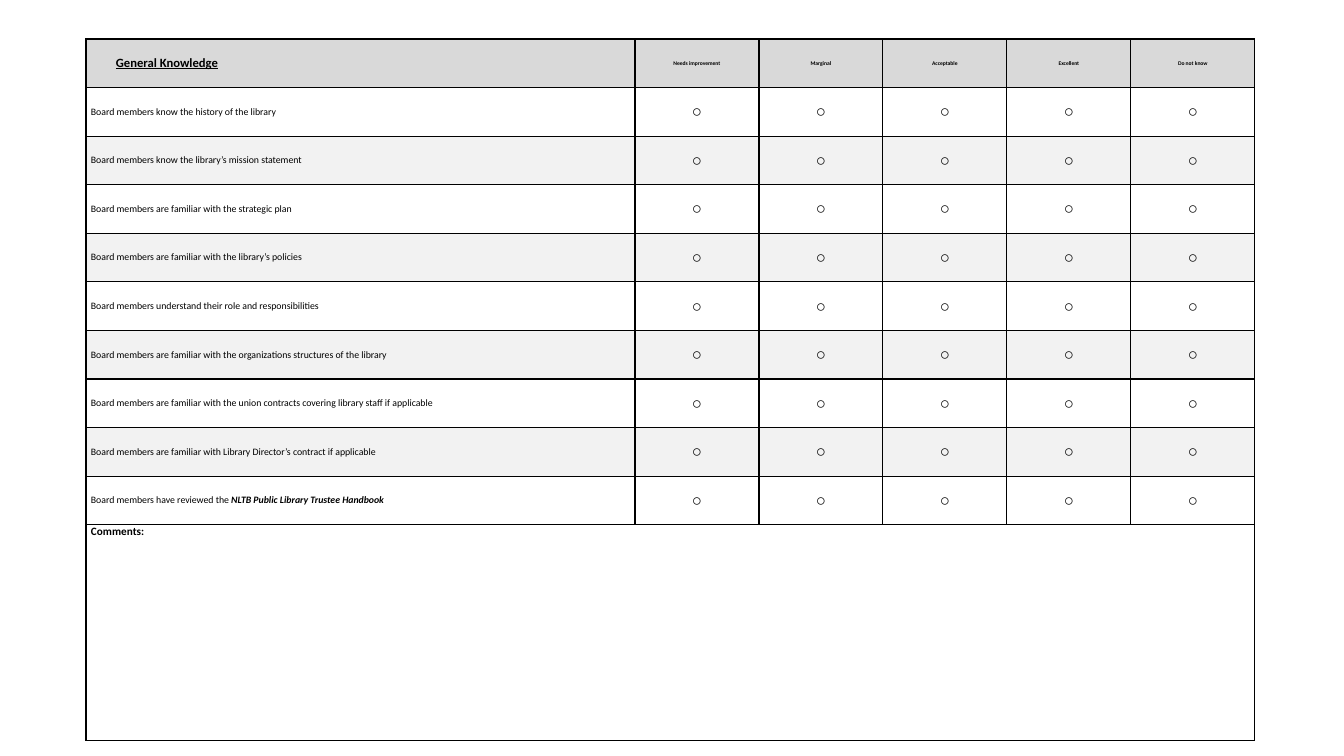
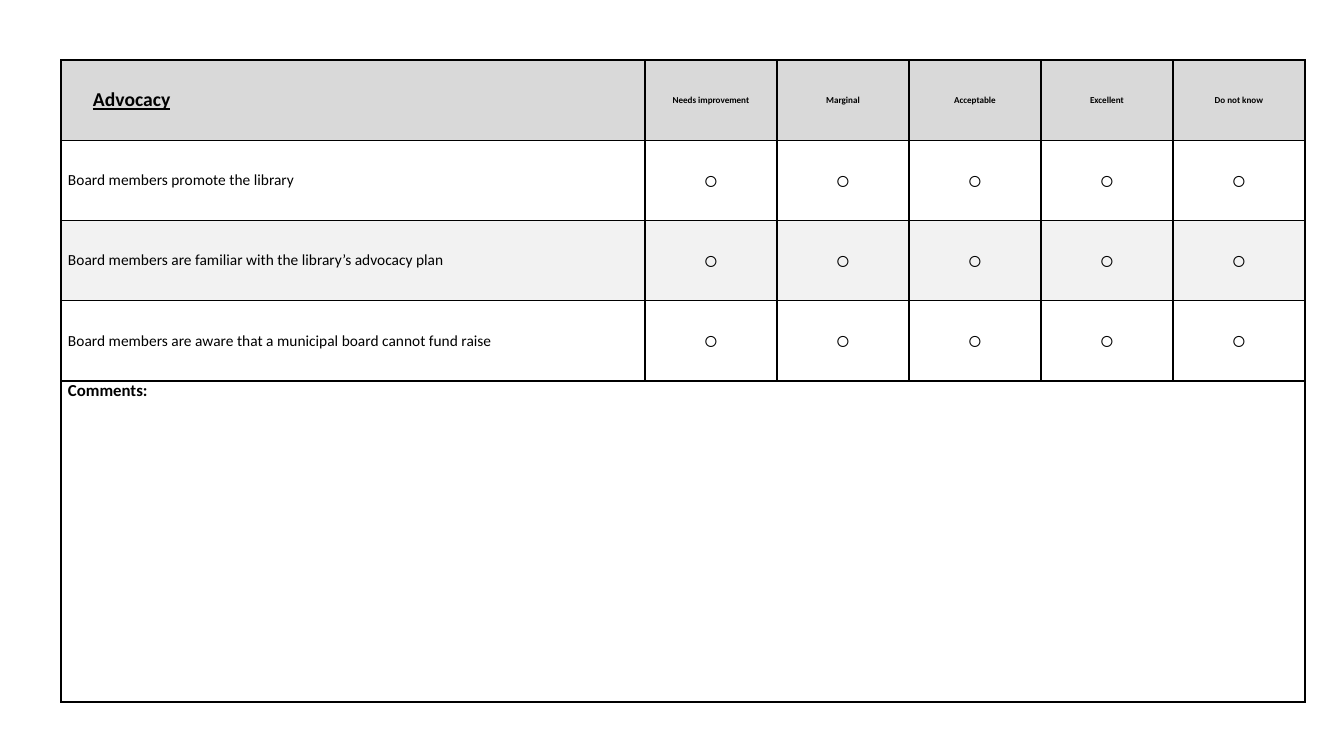
"""Build two board self-evaluation slides, each one a rating table."""
from pptx import Presentation
from pptx.dml.color import RGBColor
from pptx.enum.text import MSO_ANCHOR, PP_ALIGN
from pptx.oxml import parse_xml
from pptx.oxml.ns import nsdecls
from pptx.util import Pt

SCALE = 914400 / 100.8
LEFT, CENTER = PP_ALIGN.LEFT, PP_ALIGN.CENTER
TOP, MIDDLE = MSO_ANCHOR.TOP, MSO_ANCHOR.MIDDLE
BLACK, WHITE, HEADER, BAND = "000000", "FFFFFF", "D9D9D9", "F2F2F2"
RATINGS = ["Needs improvement", "Marginal", "Acceptable", "Excellent", "Do not know"]
INDENT = 25

SECTIONS = [
    {
        "title": "General Knowledge",
        "left": 86, "top": 39, "question_w": 549, "rating_w": 124,
        "grid_h": 486, "comments_h": 216, "inset": 5,
        "sizes": {"title": 9, "rating": 4, "question": 7, "mark": 12, "comments": 8},
        "questions": [
            ["Board members know the history of the library"],
            ["Board members know the library’s mission statement"],
            ["Board members are familiar with the strategic plan"],
            ["Board members are familiar with the library’s policies"],
            ["Board members understand their role and responsibilities"],
            ["Board members are familiar with the organizations structures of the library"],
            ["Board members are familiar with the union contracts covering library staff if applicable"],
            ["Board members are familiar with Library Director’s contract if applicable"],
            ["Board members have reviewed the ", "NLTB Public Library Trustee Handbook"],
        ],
    },
    {
        "title": "Advocacy",
        "left": 61, "top": 60, "question_w": 584, "rating_w": 132,
        "grid_h": 321, "comments_h": 321, "inset": 7,
        "sizes": {"title": 14, "rating": 6.5, "question": 11, "mark": 18, "comments": 12},
        "questions": [
            ["Board members promote the library"],
            ["Board members are familiar with the library’s advocacy plan"],
            ["Board members are aware that a municipal board cannot fund raise"],
        ],
    },
]


def px(n):
    return round(n * SCALE)


def write_cell(cell, runs, size, fill, inset, align=LEFT, anchor=MIDDLE, font="Calibri"):
    cell.margin_left = cell.margin_right = px(inset)
    cell.margin_top = cell.margin_bottom = 0
    cell.vertical_anchor = anchor
    tcPr = cell._tc.get_or_add_tcPr()
    for side in ("lnL", "lnR", "lnT", "lnB"):
        tcPr.append(parse_xml(
            f'<a:{side} {nsdecls("a")} w="12700"><a:solidFill>'
            f'<a:srgbClr val="{BLACK}"/></a:solidFill></a:{side}>'))
    cell.fill.solid()
    cell.fill.fore_color.rgb = RGBColor.from_string(fill)
    p = cell.text_frame.paragraphs[0]
    p.alignment = align
    for text, style in runs:
        r = p.add_run()
        r.text = text
        r.font.name = font
        r.font.size = Pt(size)
        r.font.color.rgb = RGBColor.from_string(BLACK)
        r.font.bold = "b" in style
        r.font.italic = "i" in style
        r.font.underline = "u" in style
    return p


prs = Presentation()
prs.slide_width, prs.slide_height = px(1344), px(756)

for section in SECTIONS:
    s = prs.slides.add_slide(prs.slide_layouts[6])
    sizes, inset, questions = section["sizes"], section["inset"], section["questions"]
    widths = [section["question_w"]] + [section["rating_w"]] * len(RATINGS)
    grid_rows = len(questions) + 1
    table = s.shapes.add_table(
        grid_rows + 1, len(widths), px(section["left"]), px(section["top"]),
        px(sum(widths)), px(section["grid_h"] + section["comments_h"])).table
    table.first_row = table.horz_banding = False
    for column, width in zip(table.columns, widths):
        column.width = px(width)
    for row in table.rows:
        row.height = px(section["grid_h"] / grid_rows)
    table.rows[grid_rows].height = px(section["comments_h"])

    p = write_cell(table.cell(0, 0), [(section["title"], "bu")], sizes["title"], HEADER, inset)
    p._p.get_or_add_pPr().set("marL", str(px(INDENT)))
    for col, rating in enumerate(RATINGS, 1):
        write_cell(table.cell(0, col), [(rating, "b")], sizes["rating"], HEADER, inset, CENTER)

    for row, question in enumerate(questions, 1):
        fill = WHITE if row % 2 else BAND
        write_cell(table.cell(row, 0), zip(question, ("", "bi")), sizes["question"], fill, inset)
        for col in range(1, len(widths)):
            write_cell(table.cell(row, col), [("○", "")], sizes["mark"], fill, inset,
                       CENTER, font="Arial")

    table.cell(grid_rows, 0).merge(table.cell(grid_rows, len(RATINGS)))
    for col in range(len(widths)):
        runs = [] if col else [("Comments:", "b")]
        write_cell(table.cell(grid_rows, col), runs, sizes["comments"], WHITE, inset, anchor=TOP)

prs.save("out.pptx")
